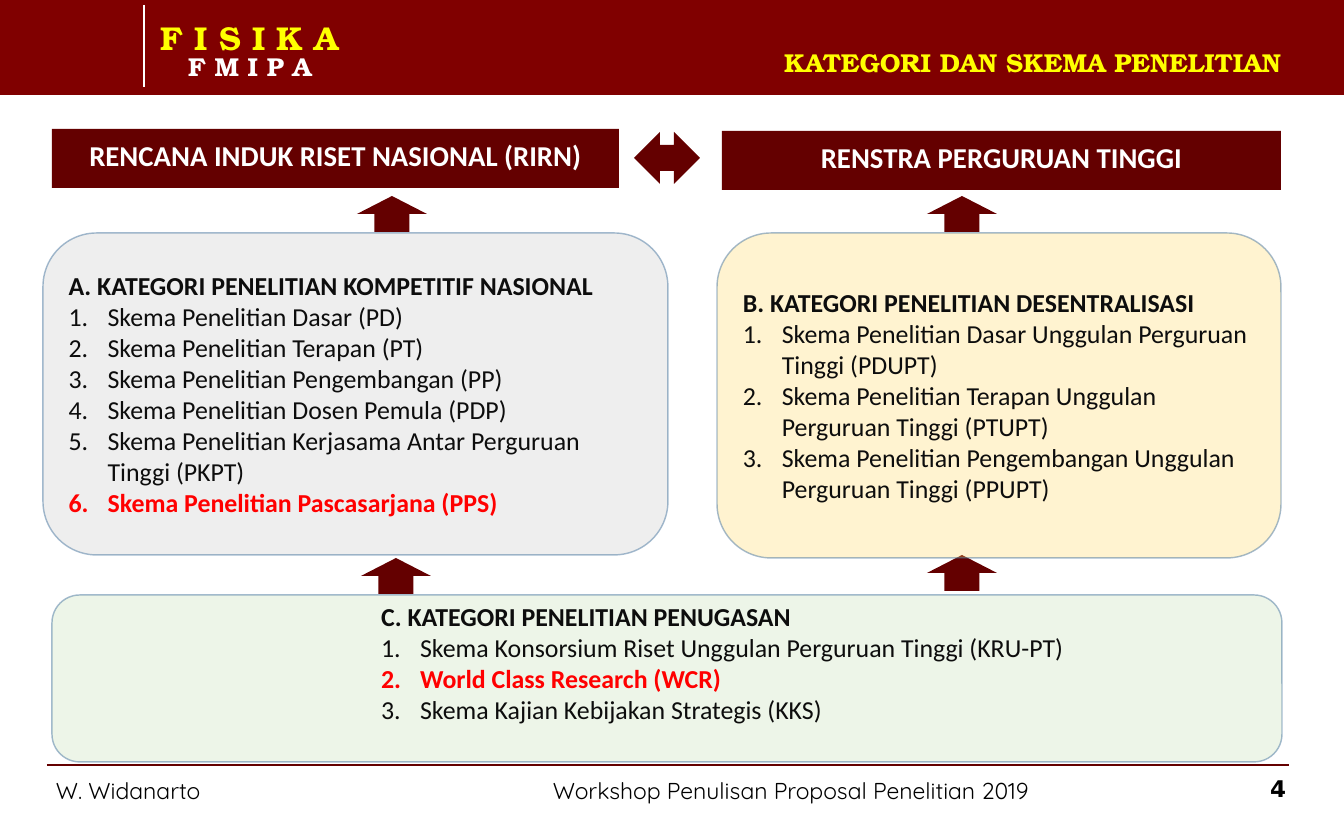
from lxml import etree
from pptx import Presentation
from pptx.dml.color import RGBColor
from pptx.enum.shapes import MSO_CONNECTOR, MSO_SHAPE
from pptx.enum.text import MSO_ANCHOR, PP_ALIGN
from pptx.oxml.ns import qn
from pptx.util import Pt

RECT, ROUND = MSO_SHAPE.RECTANGLE, MSO_SHAPE.ROUNDED_RECTANGLE
UP, BOTH = MSO_SHAPE.UP_ARROW, MSO_SHAPE.LEFT_RIGHT_ARROW
LINE = MSO_CONNECTOR.STRAIGHT
TOP, MID = MSO_ANCHOR.TOP, MSO_ANCHOR.MIDDLE
LEFT, MIDDLE, RIGHT = PP_ALIGN.LEFT, PP_ALIGN.CENTER, PP_ALIGN.RIGHT

COLORS = {
    "band": "800000", "maroon": "640000", "white": "FFFFFF",
    "yellow": "FFFF00", "black": "000000", "ink": "0D0D0D", "red": "FF0000",
    "gray": "C9C9C9", "gold": "FFD966", "green": "C5E0B4", "edge": "41719C",
}
SERIF, SANS, LIGHT, DIGIT = "TeX Gyre Bonum", "Calibri", "Quicksand", "DejaVu Sans"

RULES = [
    ((47, 765), (1289, 765), "maroon", 1),
    ((144, 5), (144, 87), "white", 1.5),
]
LABELS = [
    ("KATEGORI DAN SKEMA PENELITIAN", (509, 34, 783, 56), (11, 6), MID, RIGHT,
     SERIF, 18, "yellow", True, 1),
    ("W. Widanarto", (45, 776, 178, 34), (11, 6), TOP, LEFT,
     LIGHT, 16, "black", False, 0.8),
    ("Workshop Penulisan Proposal Penelitian 2019", (542, 776, 531, 34), (11, 6),
     TOP, LEFT, LIGHT, 16, "black", False, 0.8),
    ("4", (1220, 769, 66, 47), (0, 6), TOP, RIGHT, DIGIT, 16, "black", True, 1),
]
BRAND = [("F I S I K A", 23, "yellow", LEFT), ("F M I P A", 18, "white", MIDDLE)]
BARS = [
    ("RENCANA INDUK RISET NASIONAL (RIRN)", (52, 129, 567, 59)),
    ("RENSTRA PERGURUAN TINGGI", (722, 131, 559, 59)),
]
ARROWS = [(357, 196), (927, 196), (361, 558), (927, 555)]
CARDS = [
    ("A. KATEGORI PENELITIAN KOMPETITIF NASIONAL", [
        "Skema Penelitian Dasar (PD)",
        "Skema Penelitian Terapan (PT)",
        "Skema Penelitian Pengembangan (PP)",
        "Skema Penelitian Dosen Pemula (PDP)",
        "Skema Penelitian Kerjasama Antar Perguruan Tinggi (PKPT)",
        "Skema Penelitian Pascasarjana (PPS)",
    ], 6, "gray", (43, 233, 625, 322), (10, 5, 10, 5)),
    ("B. KATEGORI PENELITIAN DESENTRALISASI", [
        "Skema Penelitian Dasar Unggulan Perguruan Tinggi (PDUPT)",
        "Skema Penelitian Terapan Unggulan Perguruan Tinggi (PTUPT)",
        "Skema Penelitian Pengembangan Unggulan Perguruan Tinggi (PPUPT)",
    ], None, "gold", (717, 233, 564, 325), (10, 5, 10, 5)),
    ("C. KATEGORI PENELITIAN PENUGASAN", [
        "Skema Konsorsium Riset Unggulan Perguruan Tinggi (KRU-PT)",
        "World Class Research (WCR)",
        "Skema Kajian Kebijakan Strategis (KKS)",
    ], 2, "green", (52, 595, 1230, 167), (321, 0, 10, 31)),
]

prs = Presentation()
px = 914400 / 103.5


def emu(*nums):
    return [round(n * px) for n in nums]


prs.slide_width, prs.slide_height = emu(1344, 831)
slide = prs.slides.add_slide(prs.slide_layouts[6])


def rgb(name):
    return RGBColor.from_string(COLORS[name])


def fade(fill, share):
    node = fill._xPr.find(".//" + qn("a:srgbClr"))
    etree.SubElement(node, qn("a:alpha")).set("val", str(share * 1000))


def shape(kind, box, color):
    item = slide.shapes.add_shape(kind, *emu(*box))
    item.shadow.inherit = False
    item.fill.solid()
    item.fill.fore_color.rgb = rgb(color)
    item.line.fill.background()
    return item


def frame(item, pads, anchor, wrap=True):
    area = item.text_frame
    area.word_wrap = wrap
    area.vertical_anchor = anchor
    (area.margin_left, area.margin_top,
     area.margin_right, area.margin_bottom) = emu(*pads)
    return area


def style(para, face, size, color, bold, align=LEFT, space=1):
    para.alignment = align
    para.line_spacing = space
    for run in para.runs:
        run.font.name = face
        run.font.size = Pt(size)
        run.font.bold = bold
        run.font.color.rgb = rgb(color)


def number(para):
    props = para._p.get_or_add_pPr()
    dent = emu(39)[0]
    props.set("marL", str(dent))
    props.set("indent", str(-dent))
    etree.SubElement(props, qn("a:buFont")).set("typeface", "+mj-lt")
    etree.SubElement(props, qn("a:buAutoNum")).set("type", "arabicPeriod")


shape(RECT, (0, 0, 1344, 95), "band")

for start, end, color, width in RULES:
    rule = slide.shapes.add_connector(LINE, *emu(*start, *end))
    rule.line.color.rgb = rgb(color)
    rule.line.width = Pt(width)
    etree.SubElement(rule._element.spPr, qn("a:effectLst"))

brand = frame(slide.shapes.add_textbox(*emu(161, 25, 179, 57)), (0, 0, 0, 0), TOP, False)
brand.text = "\n".join(row[0] for row in BRAND)
for para, (_, size, color, align) in zip(brand.paragraphs, BRAND):
    style(para, SERIF, size, color, True, align, 0.8)

for text, box, pad, anchor, align, face, size, color, bold, space in LABELS:
    area = frame(slide.shapes.add_textbox(*emu(*box)), pad * 2, anchor)
    area.text = text
    style(area.paragraphs[0], face, size, color, bold, align, space)

for text, box in BARS:
    area = frame(shape(RECT, box, "maroon"), (10, 5, 10, 5), MID)
    area.text = text
    style(area.paragraphs[0], SANS, 20, "white", True, MIDDLE, 0.8)

shape(BOTH, (634, 132, 66, 52), "maroon")
for left, top in ARROWS:
    shape(UP, (left, top, 70, 36), "maroon")

for head, items, hot, color, box, pads in CARDS:
    card = shape(ROUND, box, color)
    fade(card.fill, 30)
    card.line.color.rgb = rgb("edge")
    card.line.width = Pt(1)
    fade(card.line.fill, 47)
    area = frame(card, pads, MID)
    area.text = "\n".join([head] + items)
    for rank, para in enumerate(area.paragraphs):
        if rank:
            number(para)
        style(para, SANS, 18, "red" if rank == hot else "ink", rank in (0, hot))

prs.save("out.pptx")
